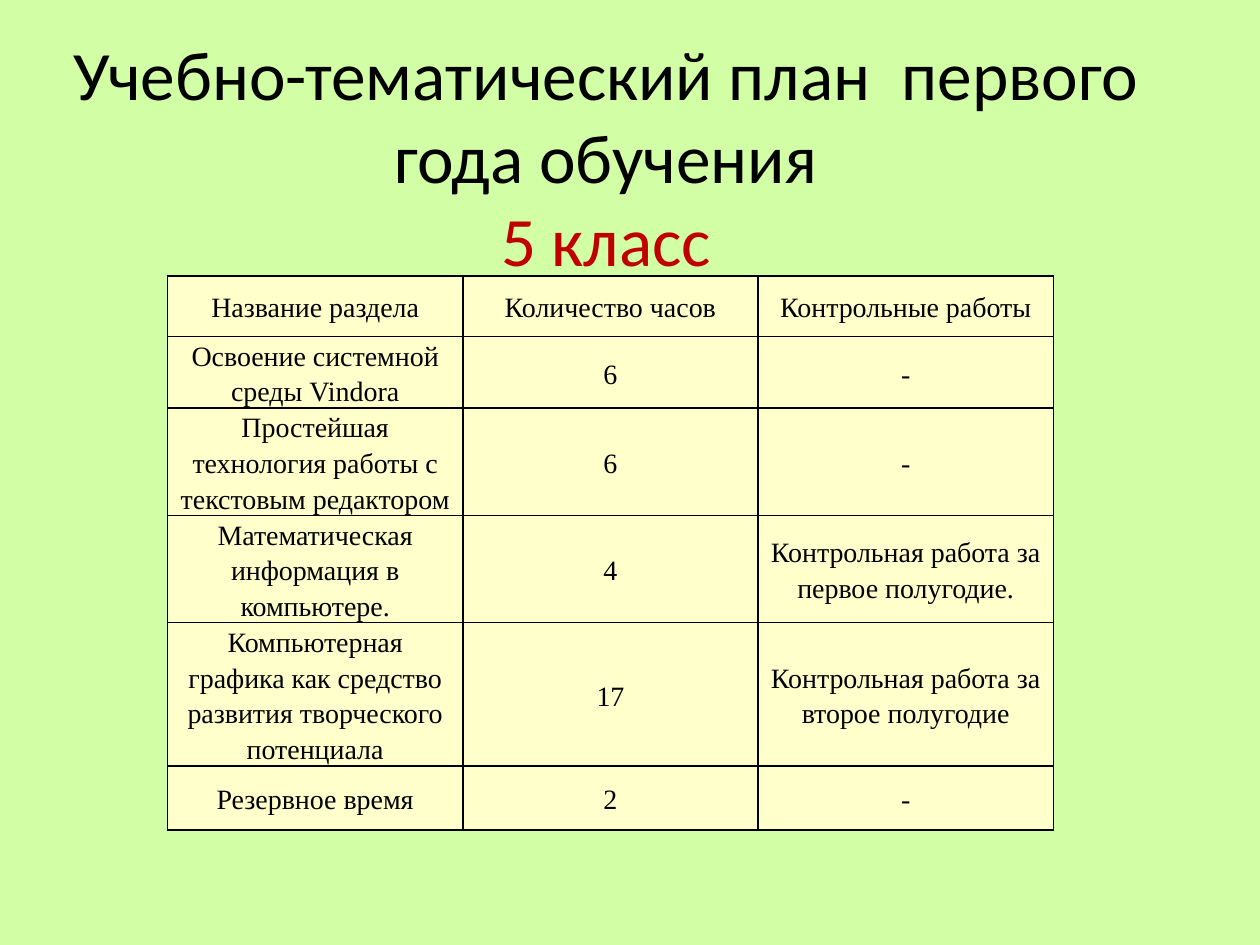
from pptx import Presentation
from pptx.dml.color import RGBColor
from pptx.enum.text import MSO_ANCHOR, MSO_AUTO_SIZE, PP_ALIGN
from pptx.oxml import parse_xml
from pptx.oxml.ns import nsdecls
from pptx.util import Inches, Pt

MIDDLE = MSO_ANCHOR.MIDDLE
CENTER = PP_ALIGN.CENTER
NO_FIT = MSO_AUTO_SIZE.NONE

GREEN = RGBColor(0xD2, 0xFF, 0xA5)
CREAM = RGBColor(0xFF, 0xFF, 0xCC)
BLACK = RGBColor(0, 0, 0)
RED = RGBColor(0xC0, 0, 0)

PLAN = [
    ("Название раздела", "Количество часов", "Контрольные работы"),
    ("Освоение системной среды Vindora", "6", "-"),
    ("Простейшая технология работы с текстовым редактором", "6", "-"),
    ("Математическая информация в компьютере.", "4",
     "Контрольная работа за первое полугодие."),
    ("Компьютерная графика как средство развития творческого потенциала",
     "17", "Контрольная работа за второе полугодие"),
    ("Резервное время", "2", "-"),
]
HEIGHTS = [0.48, 0.55, 0.84, 0.84, 1.13, 0.51]


def add_title(slide, left, top, width, height):
    title = slide.shapes.title
    title.left, title.top = Inches(left), Inches(top)
    title.width, title.height = Inches(width), Inches(height)
    frame = title.text_frame
    frame.auto_size = NO_FIT
    frame.word_wrap = True
    frame.vertical_anchor = MIDDLE
    # A deep lower inset lifts the text above the table
    frame.margin_bottom = Inches(0.71)
    para = frame.paragraphs[0]
    para.alignment = CENTER
    para.font.name = "Calibri"
    para.font.size = Pt(39.6)
    head = para.add_run()
    head.text = "Учебно-тематический план  первого года обучения"
    head.font.color.rgb = BLACK
    para.add_line_break()
    grade = para.add_run()
    grade.text = "5 класс"
    grade.font.color.rgb = RED


def set_border(cell):
    props = cell._tc.get_or_add_tcPr()
    for index, side in enumerate(("lnL", "lnR", "lnT", "lnB")):
        props.insert(index, parse_xml(
            f'<a:{side} {nsdecls("a")} w="{Pt(1)}"><a:solidFill>'
            f'<a:srgbClr val="{BLACK}"/></a:solidFill></a:{side}>'))


def fill_cell(cell, text):
    cell.fill.solid()
    cell.fill.fore_color.rgb = CREAM
    cell.vertical_anchor = MIDDLE
    cell.margin_left = cell.margin_right = Inches(0.07)
    cell.margin_top = cell.margin_bottom = 0
    set_border(cell)
    cell.text = text
    para = cell.text_frame.paragraphs[0]
    para.alignment = CENTER
    para.line_spacing = 1.15
    para.space_after = Pt(10)
    para.font.name = "Times New Roman"
    para.font.size = Pt(16)
    para.font.bold = False
    para.font.color.rgb = BLACK


def add_plan(slide, left, top, width):
    table = slide.shapes.add_table(
        len(PLAN), len(PLAN[0]), Inches(left), Inches(top),
        Inches(width), Inches(sum(HEIGHTS))).table
    table.first_row = table.horz_banding = False
    for row, height, texts in zip(table.rows, HEIGHTS, PLAN):
        row.height = Inches(height)
        for cell, text in zip(row.cells, texts):
            fill_cell(cell, text)


def main():
    deck = Presentation()
    deck.slide_width, deck.slide_height = Inches(10), Inches(7.5)
    slide = deck.slides.add_slide(deck.slide_layouts[5])
    back = slide.background.fill
    back.solid()
    back.fore_color.rgb = GREEN
    add_title(slide, 0.31, 0.94, 9, 1.25)
    add_plan(slide, 1.33, 2.19, 7.03)
    deck.save("out.pptx")


if __name__ == "__main__":
    main()
